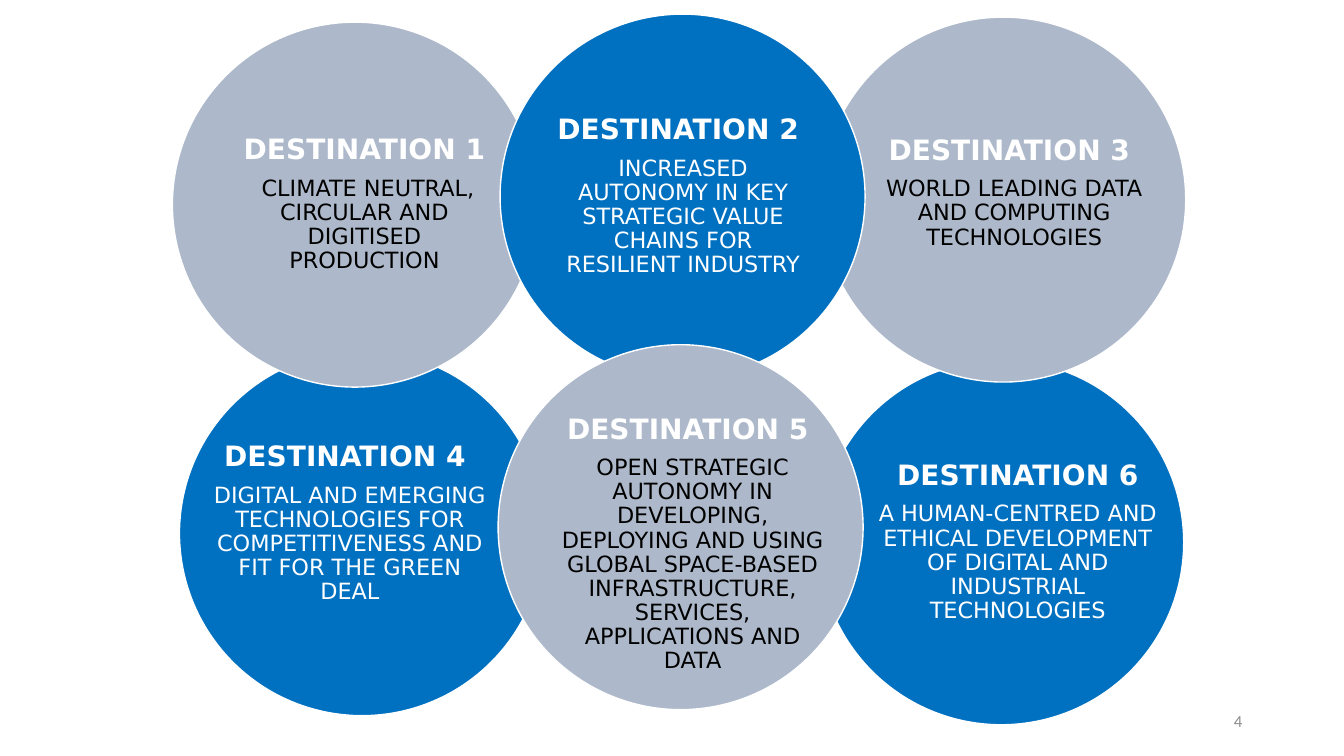
from pptx import Presentation
from pptx.dml.color import RGBColor
from pptx.enum.shapes import MSO_SHAPE as Shape
from pptx.enum.text import MSO_ANCHOR as Anchor, PP_ALIGN as Align
from pptx.util import Emu, Pt

PX = 9144  # 100 px to the inch
DIAMETER = 362
BLUE, GREY, WHITE, BLACK = "0070C0", "ADB9CA", "FFFFFF", "000000"

# circle corner, text box, fill, body colour, title, body; from back to front
DESTINATIONS = [
    ((812, 357), (865, 410, 289, 256), BLUE, WHITE, "DESTINATION 6",
     "A HUMAN-CENTRED AND ETHICAL DEVELOPMENT OF DIGITAL AND INDUSTRIAL TECHNOLOGIES"),
    ((178, 348), (206, 408, 282, 223), BLUE, WHITE, "DESTINATION 4 ",
     "DIGITAL AND EMERGING TECHNOLOGIES FOR COMPETITIVENESS AND FIT FOR THE GREEN DEAL"),
    ((814, 17), (873, 80, 266, 223), GREY, BLACK, "DESTINATION 3 ",
     "WORLD LEADING DATA AND COMPUTING TECHNOLOGIES"),
    ((171, 22), (228, 75, 267, 256), GREY, BLACK, "DESTINATION 1",
     " CLIMATE NEUTRAL, CIRCULAR AND DIGITISED PRODUCTION"),
    ((496, 14), (549, 67, 257, 256), BLUE, WHITE, "DESTINATION 2 ",
     "INCREASED AUTONOMY IN KEY STRATEGIC VALUE CHAINS FOR RESILIENT INDUSTRY"),
    ((494, 342), (549, 412, 276, 256), GREY, BLACK, "DESTINATION 5 ",
     "OPEN STRATEGIC AUTONOMY IN DEVELOPING, DEPLOYING AND USING GLOBAL SPACE-BASED "
     "INFRASTRUCTURE, SERVICES, APPLICATIONS AND DATA"),
]


def px(*lengths):
    return [Emu(n * PX) for n in lengths]


def rgb(color):
    return RGBColor.from_string(color)


class SlideBuilder:
    def __init__(self, slide, font="DejaVu Sans"):
        self.slide = slide
        self.font = font

    def circle(self, shapes, left, top, fill):
        sp = shapes.add_shape(Shape.OVAL, *px(left, top, DIAMETER, DIAMETER))
        sp.shadow.inherit = False
        sp.fill.solid()
        sp.fill.fore_color.rgb = rgb(fill)
        sp.line.color.rgb = rgb(WHITE)
        sp.line.width = Pt(1)

    def text_box(self, shapes, box, margin=None):
        tf = shapes.add_textbox(*px(*box)).text_frame
        tf.word_wrap = True
        tf.vertical_anchor = Anchor.MIDDLE
        if margin is not None:
            tf.margin_left, tf.margin_top, tf.margin_right, tf.margin_bottom = px(*[margin] * 4)
        return tf

    def set_text(self, p, text, size, color, align=Align.CENTER, bold=False, font=None):
        p.text = text
        p.alignment = align
        for r in p.runs:
            r.font.name = font or self.font
            r.font.size = Pt(size)
            r.font.bold = bold
            r.font.color.rgb = rgb(color)

    def destination(self, corner, box, fill, body_color, title, body):
        """Group a circle with its title and description."""
        shapes = self.slide.shapes.add_group_shape().shapes
        self.circle(shapes, *corner, fill)
        tf = self.text_box(shapes, box, margin=3)
        self.set_text(tf.paragraphs[0], title, 20, WHITE, bold=True)
        self.set_text(tf.add_paragraph(), body, 16, body_color)
        for p in tf.paragraphs:
            p.line_spacing = 0.9
        tf.paragraphs[0].space_after = Pt(8)

    def page_number(self, number):
        tf = self.text_box(self.slide.shapes, (942, 695, 300, 40))
        self.set_text(tf.paragraphs[0], number, 12, "8C8C8C", Align.RIGHT, font="Calibri")


def main():
    prs = Presentation()
    prs.slide_width, prs.slide_height = px(1333, 750)
    builder = SlideBuilder(prs.slides.add_slide(prs.slide_layouts[6]))
    builder.page_number("4")
    for destination in DESTINATIONS:
        builder.destination(*destination)
    prs.save("out.pptx")


if __name__ == "__main__":
    main()
